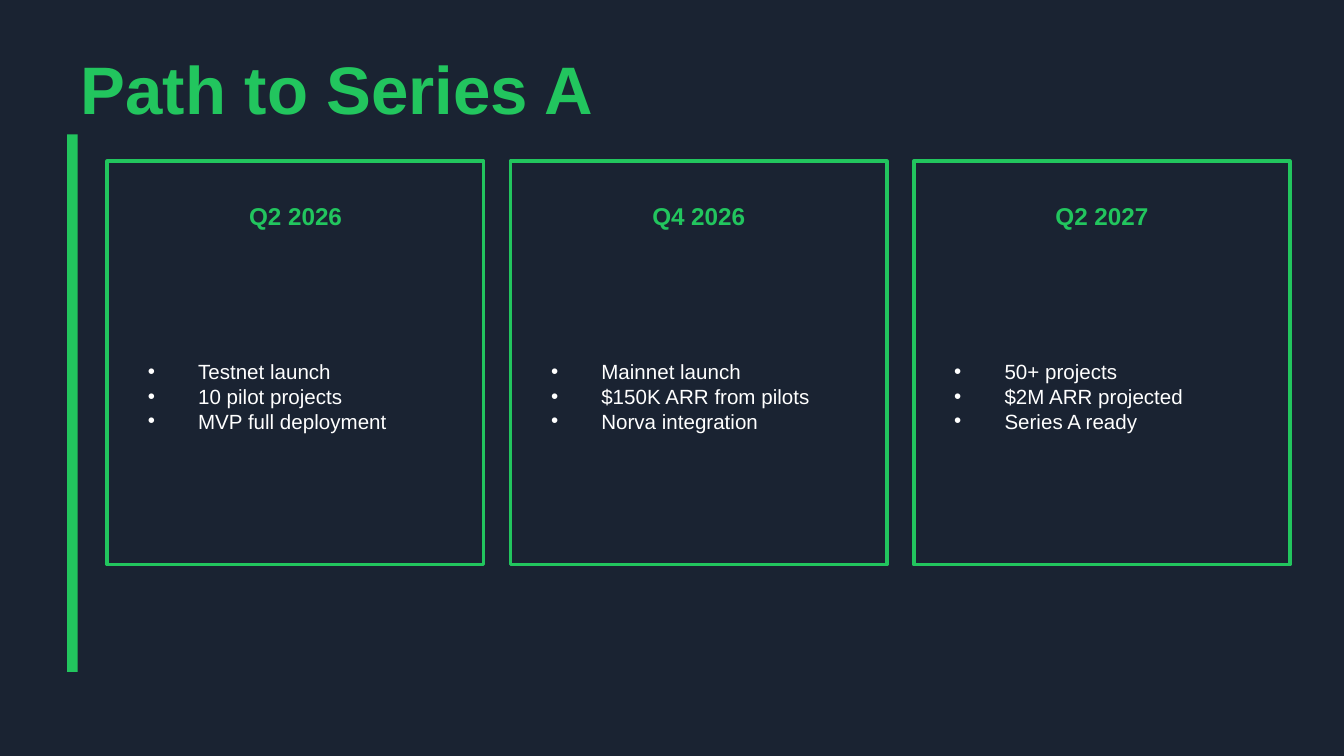
from dataclasses import dataclass

from lxml.etree import SubElement
from pptx import Presentation
from pptx.dml.color import RGBColor
from pptx.enum.shapes import MSO_SHAPE as Preset
from pptx.enum.text import MSO_ANCHOR as Anchor, MSO_AUTO_SIZE as AutoSize, PP_ALIGN as Align
from pptx.oxml.ns import qn
from pptx.util import Cm, Pt

COLOURS = {"background": "1A2332", "accent": "22C55E", "text": "FFFFFF"}
FONT = "Arial"
COMPARISON_LAYOUT = 4
CARD_LEFT, CARD_TOP = 2.03, 3.05
CARD_WIDTH, CARD_HEIGHT = 7.11, 7.62
CARD_STEP = 7.62
LIST_INSET = 0.51
BULLET_INDENT = 0.95


@dataclass(frozen=True)
class Milestone:
    """A quarter, its goals and the placeholder that lists them."""

    quarter: str
    goals: tuple[str, ...]
    placeholder: int


MILESTONES = (
    Milestone("Q2 2026", ("Testnet launch", "10 pilot projects", "MVP full deployment"), 1),
    Milestone("Q4 2026", ("Mainnet launch", "$150K ARR from pilots", "Norva integration"), 2),
    Milestone("Q2 2027", ("50+ projects", "$2M ARR projected", "Series A ready"), 4),
)


def colour(name: str) -> RGBColor:
    """Look up a named colour."""
    return RGBColor.from_string(COLOURS[name])


def place(box, left: float, top: float, width: float, height: float) -> None:
    """Move and size a box, given centimetres."""
    box.left, box.top, box.width, box.height = Cm(left), Cm(top), Cm(width), Cm(height)


def prepare_frame(box):
    """Make a text frame wrap, keep its size and centre vertically."""
    frame = box.text_frame
    frame.word_wrap = True
    frame.auto_size = AutoSize.NONE
    frame.vertical_anchor = Anchor.MIDDLE
    return frame


def add_run(para, text: str, size: float, tint: str, bold: bool = False) -> None:
    """Append a formatted run."""
    span = para.add_run()
    span.text = text
    span.font.name = FONT
    span.font.size = Pt(size)
    span.font.bold = bold
    span.font.color.rgb = colour(tint)


def add_rectangle(page, left: float, top: float, width: float, height: float, fill: str):
    """Draw a flat rectangle without an outline."""
    box = page.shapes.add_shape(Preset.RECTANGLE, Cm(left), Cm(top), Cm(width), Cm(height))
    box.shadow.inherit = False
    box.fill.solid()
    box.fill.fore_color.rgb = colour(fill)
    box.line.fill.background()
    return box


def add_bullet(para) -> None:
    """Give a paragraph a round bullet with a hanging indent."""
    properties = para._p.get_or_add_pPr()
    properties.set("marL", str(Cm(BULLET_INDENT)))
    properties.set("indent", str(-Cm(BULLET_INDENT)))
    SubElement(properties, qn("a:buFont"), typeface=FONT)
    SubElement(properties, qn("a:buChar"), char="•")


def fill_list(box, goals: tuple[str, ...]) -> None:
    """Write the goals as bulleted paragraphs."""
    frame = prepare_frame(box)
    for number, goal in enumerate(goals):
        para = frame.add_paragraph() if number else frame.paragraphs[0]
        add_bullet(para)
        para.alignment = Align.LEFT
        para.space_before = Pt(0)
        add_run(para, goal, 11, "text")


def draw_milestone(page, milestone: Milestone, left: float, goal_list) -> None:
    """Draw a card with its heading and list."""
    card = add_rectangle(page, left, CARD_TOP, CARD_WIDTH, CARD_HEIGHT, "background")
    card.line.color.rgb = colour("accent")
    card.line.width = Pt(2)

    heading = page.shapes.add_textbox(Cm(left), Cm(3.56), Cm(CARD_WIDTH), Cm(1.02))
    para = prepare_frame(heading).paragraphs[0]
    para.alignment = Align.CENTER
    add_run(para, milestone.quarter, 13, "accent", bold=True)

    place(goal_list, left + LIST_INSET, 4.95, CARD_WIDTH - 2 * LIST_INSET, 5.08)
    fill_list(goal_list, milestone.goals)
    element = goal_list.element
    element.getparent().append(element)


def main() -> None:
    """Build and save the deck."""
    deck = Presentation()
    deck.slide_width, deck.slide_height = Cm(25.4), Cm(14.29)
    page = deck.slides.add_slide(deck.slide_layouts[COMPARISON_LAYOUT])
    page.background.fill.solid()
    page.background.fill.fore_color.rgb = colour("background")

    title = page.shapes.title
    place(title, 1.27, 1.02, 22.86, 1.27)
    para = prepare_frame(title).paragraphs[0]
    para.alignment = Align.LEFT
    add_run(para, "Path to Series A", 36, "accent", bold=True)

    add_rectangle(page, 1.27, 2.54, 0.2, 10.16, "accent")

    bodies = {body.placeholder_format.idx: body for body in page.placeholders}
    for number, milestone in enumerate(MILESTONES):
        left = CARD_LEFT + number * CARD_STEP
        draw_milestone(page, milestone, left, bodies[milestone.placeholder])

    unused = bodies[3].element
    unused.getparent().remove(unused)
    deck.save("out.pptx")


if __name__ == "__main__":
    main()
